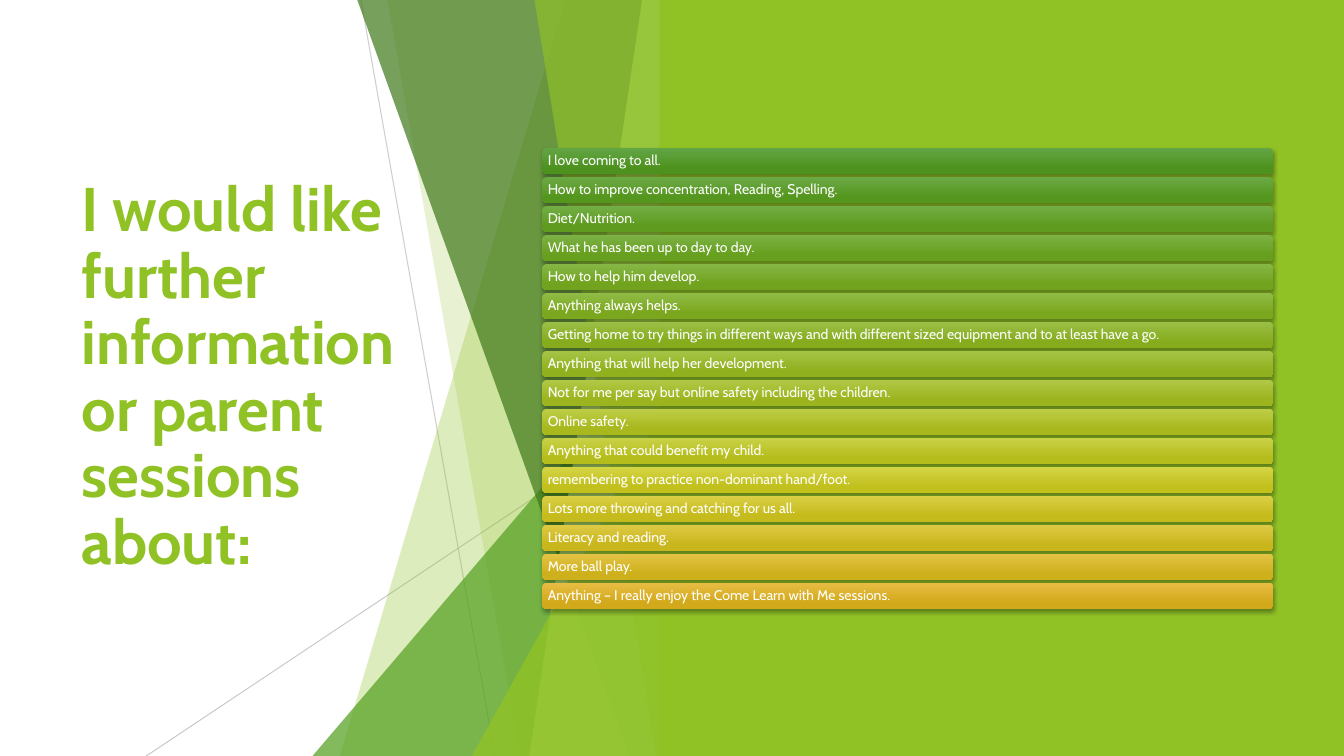
import colorsys
from dataclasses import dataclass

import pptx
import pptx.dml.color
import pptx.enum.shapes
import pptx.enum.text
import pptx.oxml.ns
import pptx.util
from lxml import etree
from pptx.util import Inches

SHAPE = pptx.enum.shapes.MSO_SHAPE
RGB = pptx.dml.color.RGBColor.from_string
qn = pptx.oxml.ns.qn


@dataclass(frozen=True)
class Theme:
    font: str = "Cabin"
    title_size: int = 44
    reply_size: int = 10
    lime: str = "90C226"
    green: str = "54A021"
    dark_green: str = "3F7819"
    pale_lime: str = "C0E474"
    hairline: str = "BFBFBF"
    white: str = "FFFFFF"
    black: str = "000000"
    # Gradient of the first and the last bar: (top colour, bottom colour)
    first_bar: tuple = ("63A545", "4D921E")
    last_bar: tuple = ("E7BC43", "D2A91B")


THEME = Theme()
FACET_RIGHT = 6.66
SLIDE_HEIGHT = 7.5

REPLIES = [
    "I love coming to all.",
    "How to improve concentration, Reading, Spelling.",
    "Diet/Nutrition.",
    "What he has been up to day to day.",
    "How to help him develop.",
    "Anything always helps.",
    "Getting home to try things in different ways and with different sized equipment and to at least have a go.",
    "Anything that will help her development.",
    "Not for me per say but online safety including the children.",
    "Online safety.",
    "Anything that could benefit my child.",
    "remembering to practice non-dominant hand/foot.",
    "Lots more throwing and catching for us all.",
    "Literacy and reading.",
    "More ball play.",
    "Anything – I really enjoy the Come Learn with Me sessions.",
]


def set_opacity(fill_owner, percent):
    """Add transparency to the solid colour found inside the element."""
    colour = fill_owner.find(".//" + qn("a:srgbClr"))
    etree.SubElement(colour, qn("a:alpha"), val=str(percent * 1000))


def blend(start, end, share):
    """Mix two colours along hue, saturation and value."""
    first, last = (
        colorsys.rgb_to_hsv(*(channel / 255 for channel in RGB(colour)))
        for colour in (start, end)
    )
    mixed = (a + (b - a) * share for a, b in zip(first, last))
    return pptx.dml.color.RGBColor(*(round(c * 255) for c in colorsys.hsv_to_rgb(*mixed)))


def write_text(shape, text, *, size, color, bold=False, inset=0.1, space_after=0):
    frame = shape.text_frame
    frame.word_wrap = True
    frame.vertical_anchor = pptx.enum.text.MSO_ANCHOR.MIDDLE
    frame.margin_left = frame.margin_right = Inches(inset)
    frame.margin_top = frame.margin_bottom = Inches(0.05)
    paragraph = frame.paragraphs[0]
    paragraph.alignment = pptx.enum.text.PP_ALIGN.LEFT
    paragraph.line_spacing = 0.9
    paragraph.space_after = pptx.util.Pt(space_after)
    run = paragraph.add_run()
    run.text = text
    run.font.name = THEME.font
    run.font.size = pptx.util.Pt(size)
    run.font.bold = bold
    run.font.color.rgb = RGB(color)


def paint(shape, color, opacity=100):
    shape.shadow.inherit = False
    shape.fill.solid()
    shape.fill.fore_color.rgb = RGB(color)
    shape.line.fill.background()
    if opacity < 100:
        set_opacity(shape.fill._xPr, opacity)


def add_facet(slide, top_x, bottom_x, color, opacity):
    """Full-height facet with a slanted left edge."""
    top = Inches(-0.01)
    right, bottom = Inches(FACET_RIGHT), Inches(SLIDE_HEIGHT)
    outline = slide.shapes.build_freeform(Inches(top_x), top)
    outline.add_line_segments([(right, top), (right, bottom), (Inches(bottom_x), bottom)])
    paint(outline.convert_to_shape(), color, opacity)


def add_corner_triangle(slide, left, top, color, opacity):
    """Triangle rising from the bottom edge to the facets' right side."""
    triangle = slide.shapes.add_shape(
        SHAPE.ISOSCELES_TRIANGLE, Inches(left), Inches(top),
        Inches(FACET_RIGHT - left), Inches(SLIDE_HEIGHT - top))
    triangle.adjustments[0] = 1
    paint(triangle, color, opacity)


def add_hairline(slide, start, end, opacity):
    hairline = slide.shapes.add_connector(
        pptx.enum.shapes.MSO_CONNECTOR.STRAIGHT,
        *(Inches(value) for value in (*start, *end)))
    hairline.line.color.rgb = RGB(THEME.hairline)
    hairline.line.width = pptx.util.Pt(0.75)
    properties = hairline._element.spPr
    set_opacity(properties, opacity)
    etree.SubElement(properties, qn("a:effectLst"))


def add_bar_shadow(bar):
    bar.shadow.inherit = False
    effects = bar._element.spPr.find(qn("a:effectLst"))
    shadow = etree.SubElement(
        effects, qn("a:outerShdw"), blurRad=str(pptx.util.Pt(3)),
        dist=str(pptx.util.Pt(2)), dir="5400000", rotWithShape="0")
    etree.SubElement(shadow, qn("a:srgbClr"), val=THEME.black)
    set_opacity(shadow, 35)


def add_reply_bar(slide, index, reply):
    pitch = 4.31 / (len(REPLIES) - 1)
    bar = slide.shapes.add_shape(
        SHAPE.ROUNDED_RECTANGLE, Inches(5.38), Inches(1.47 + index * pitch),
        Inches(7.25), Inches(0.26))
    bar.fill.gradient()
    bar.fill.gradient_angle = 270
    share = index / (len(REPLIES) - 1)
    ends = zip(bar.fill.gradient_stops, THEME.first_bar, THEME.last_bar, (0, 0.78))
    for stop, first, last, position in ends:
        stop.color.rgb = blend(first, last, share)
        stop.position = position
    bar.line.fill.background()
    add_bar_shadow(bar)
    write_text(bar, reply, size=THEME.reply_size, color=THEME.white, inset=0.04)


def main():
    presentation = pptx.Presentation()
    presentation.slide_width = Inches(13.33)
    presentation.slide_height = Inches(SLIDE_HEIGHT)
    slide = presentation.slides.add_slide(presentation.slide_layouts[6])

    # Title
    title = slide.shapes.add_textbox(Inches(0.71), Inches(1.51), Inches(3.88), Inches(4.48))
    write_text(title, "I would like further information or parent sessions about:",
               size=THEME.title_size, color=THEME.lime, bold=True, space_after=6)

    # Faceted backdrop, from back to front
    add_hairline(slide, (3.58, 0), (4.91, SLIDE_HEIGHT), 75)
    add_hairline(slide, (FACET_RIGHT, 4.03), (1.45, SLIDE_HEIGHT), 80)
    add_facet(slide, 5.61, 3.37, THEME.lime, 30)
    add_facet(slide, 3.84, 5.16, THEME.lime, 20)
    add_corner_triangle(slide, 3.1, 3.33, THEME.green, 72)
    add_facet(slide, 3.54, 6.24, THEME.dark_green, 70)
    add_facet(slide, 6.37, 5.25, THEME.pale_lime, 70)
    add_facet(slide, 5.3, 6.51, THEME.lime, 65)
    add_corner_triangle(slide, 4.68, 3.93, THEME.lime, 80)

    # Green panel on the right
    panel = slide.shapes.add_shape(
        SHAPE.RECTANGLE, Inches(6.54), 0, Inches(6.79), Inches(SLIDE_HEIGHT))
    paint(panel, THEME.lime)

    # Parents' replies
    for index, reply in enumerate(REPLIES):
        add_reply_bar(slide, index, reply)

    presentation.save("out.pptx")


if __name__ == "__main__":
    main()
